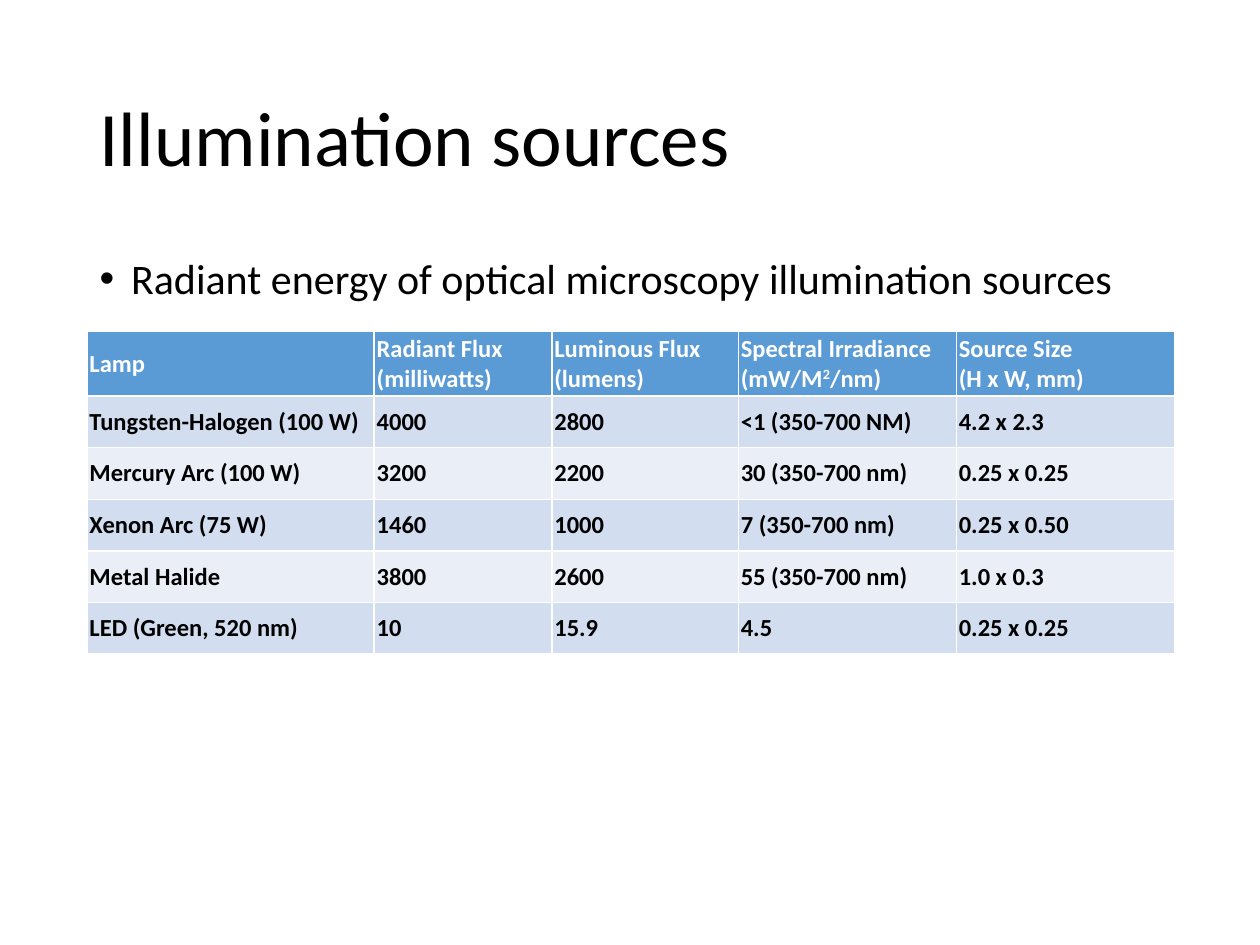
from dataclasses import dataclass

import lxml.etree
import pptx
import pptx.dml.color
import pptx.enum.text
import pptx.oxml.ns
import pptx.util

Inches = pptx.util.Inches
Pt = pptx.util.Pt


@dataclass(frozen=True)
class Theme:
    font: str = "Calibri"
    title_size: int = 44
    body_size: int = 24
    table_size: int = 14
    text: str = "000000"
    header_text: str = "FFFFFF"
    header_fill: str = "5B9BD5"
    bands: tuple = ("D2DEEF", "EAEFF7")


THEME = Theme()
LEFT, CONTENT_WIDTH = 0.69, 8.62
ROW_HEIGHT = 0.41
CELL_MARGIN = 0.02
COLUMN_WIDTHS = [2.28, 1.41, 1.48, 1.73, 1.73]
SUPERSCRIPT_MARK = "^"

HEADERS = [
    "Lamp",
    "Radiant Flux\n(milliwatts)",
    "Luminous Flux\n(lumens)",
    "Spectral Irradiance\n(mW/M^2^/nm)",
    "Source Size\n(H x W, mm)",
]
LAMPS = [
    ["Tungsten-Halogen (100 W)", "4000", "2800", "<1 (350-700 NM)", "4.2 x 2.3"],
    ["Mercury Arc (100 W)", "3200", "2200", "30 (350-700 nm)", "0.25 x 0.25"],
    ["Xenon Arc (75 W)", "1460", "1000", "7 (350-700 nm)", "0.25 x 0.50"],
    ["Metal Halide", "3800", "2600", "55 (350-700 nm)", "1.0 x 0.3"],
    ["LED (Green, 520 nm)", "10", "15.9", "4.5", "0.25 x 0.25"],
]


def rgb(value):
    return pptx.dml.color.RGBColor.from_string(value)


def style_paragraph(paragraph, size, color, bold=False):
    paragraph.alignment = pptx.enum.text.PP_ALIGN.LEFT
    font = paragraph.font
    font.name = THEME.font
    font.size = Pt(size)
    font.bold = bold
    font.color.rgb = rgb(color)


def add_bullet(paragraph, indent):
    properties = paragraph._p.get_or_add_pPr()
    properties.set("marL", str(Inches(indent)))
    properties.set("indent", str(-Inches(indent)))
    for tag, key, value in (("a:buFont", "typeface", "Arial"), ("a:buChar", "char", "•")):
        element = lxml.etree.SubElement(properties, pptx.oxml.ns.qn(tag))
        element.set(key, value)


def fill_placeholder(placeholder, text, top, height, size, anchor, bulleted=False):
    placeholder.left, placeholder.top = Inches(LEFT), Inches(top)
    placeholder.width, placeholder.height = Inches(CONTENT_WIDTH), Inches(height)
    frame = placeholder.text_frame
    frame.text = text
    frame.word_wrap = True
    frame.auto_size = pptx.enum.text.MSO_AUTO_SIZE.NONE
    frame.vertical_anchor = anchor
    paragraph = frame.paragraphs[0]
    if bulleted:
        add_bullet(paragraph, 0.25)
    paragraph.line_spacing = 0.9
    paragraph.space_before = Pt(0)
    style_paragraph(paragraph, size, THEME.text)


def write_with_superscripts(paragraph, text):
    start, *rest = text.split(SUPERSCRIPT_MARK)
    paragraph.text = start
    for position, part in enumerate(rest):
        run = paragraph.add_run()
        run.text = part
        if position % 2 == 0:
            run.font._element.set("baseline", "30000")


def fill_cell(cell, text, fill, color):
    cell.margin_left = cell.margin_right = Inches(CELL_MARGIN)
    cell.margin_top = cell.margin_bottom = Inches(CELL_MARGIN)
    cell.vertical_anchor = pptx.enum.text.MSO_ANCHOR.MIDDLE
    cell.fill.solid()
    cell.fill.fore_color.rgb = rgb(fill)
    paragraph = cell.text_frame.paragraphs[0]
    write_with_superscripts(paragraph, text)
    style_paragraph(paragraph, THEME.table_size, color, bold=True)


def add_lamp_table(slide, top):
    rows = [HEADERS] + LAMPS
    lamp_table = slide.shapes.add_table(
        len(rows), len(HEADERS), Inches(LEFT), Inches(top),
        Inches(CONTENT_WIDTH), Inches(ROW_HEIGHT * len(rows)),
    ).table
    for column, width in zip(lamp_table.columns, COLUMN_WIDTHS):
        column.width = Inches(width)
    for index, values in enumerate(rows):
        lamp_table.rows[index].height = Inches(ROW_HEIGHT)
        if index == 0:
            fill, color = THEME.header_fill, THEME.header_text
        else:
            fill, color = THEME.bands[(index - 1) % 2], THEME.text
        for cell, value in zip(lamp_table.rows[index].cells, values):
            fill_cell(cell, value, fill, color)


def main():
    presentation = pptx.Presentation()
    presentation.slide_width, presentation.slide_height = Inches(10), Inches(7.5)
    slide = presentation.slides.add_slide(presentation.slide_layouts[1])
    anchors = pptx.enum.text.MSO_ANCHOR
    fill_placeholder(slide.shapes.title, "Illumination sources",
                     0.4, 1.45, THEME.title_size, anchors.MIDDLE)
    fill_placeholder(slide.placeholders[1],
                     "Radiant energy of optical microscopy illumination sources",
                     2, 4.76, THEME.body_size, anchors.TOP, bulleted=True)
    add_lamp_table(slide, 2.63)
    presentation.save("out.pptx")


if __name__ == "__main__":
    main()
